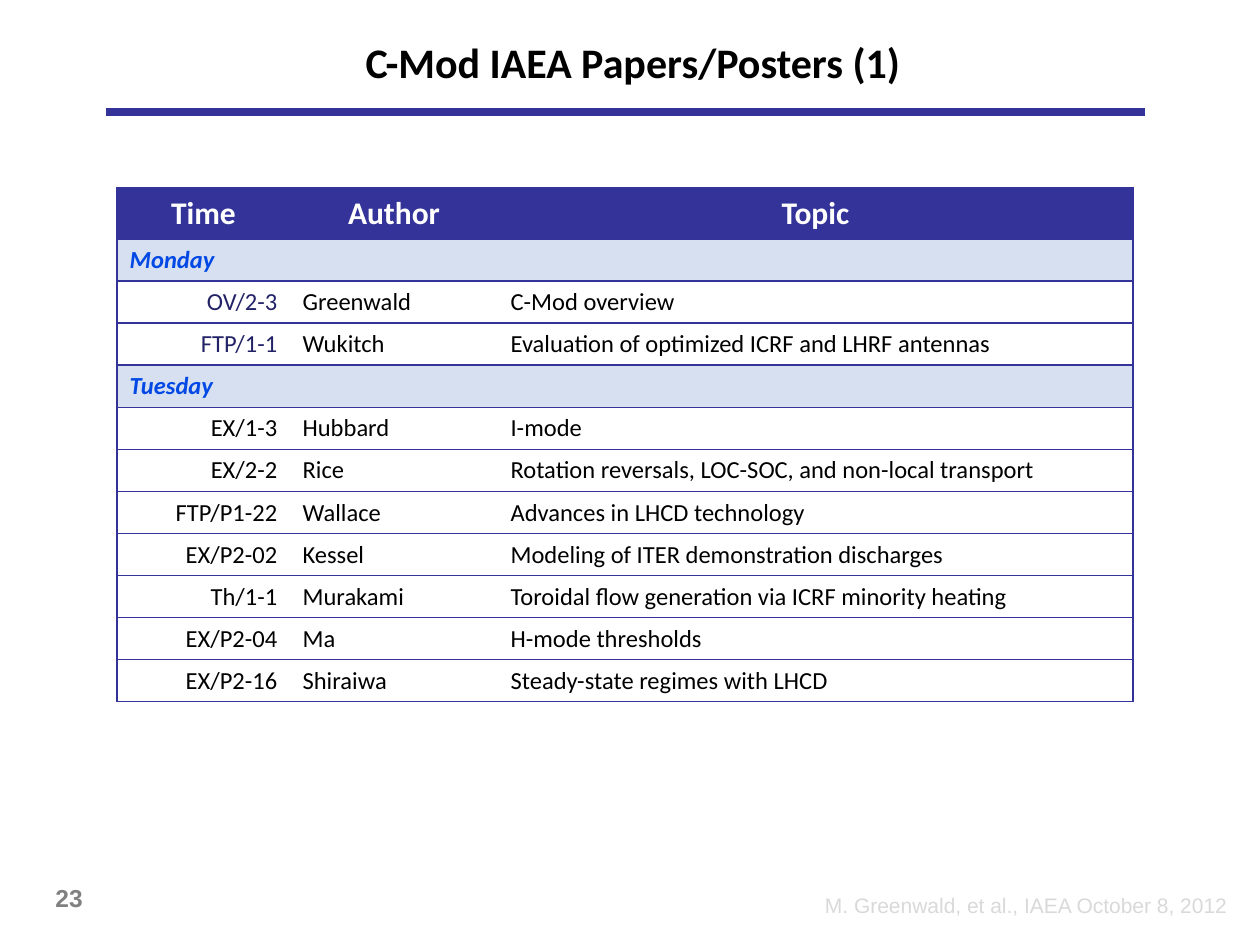
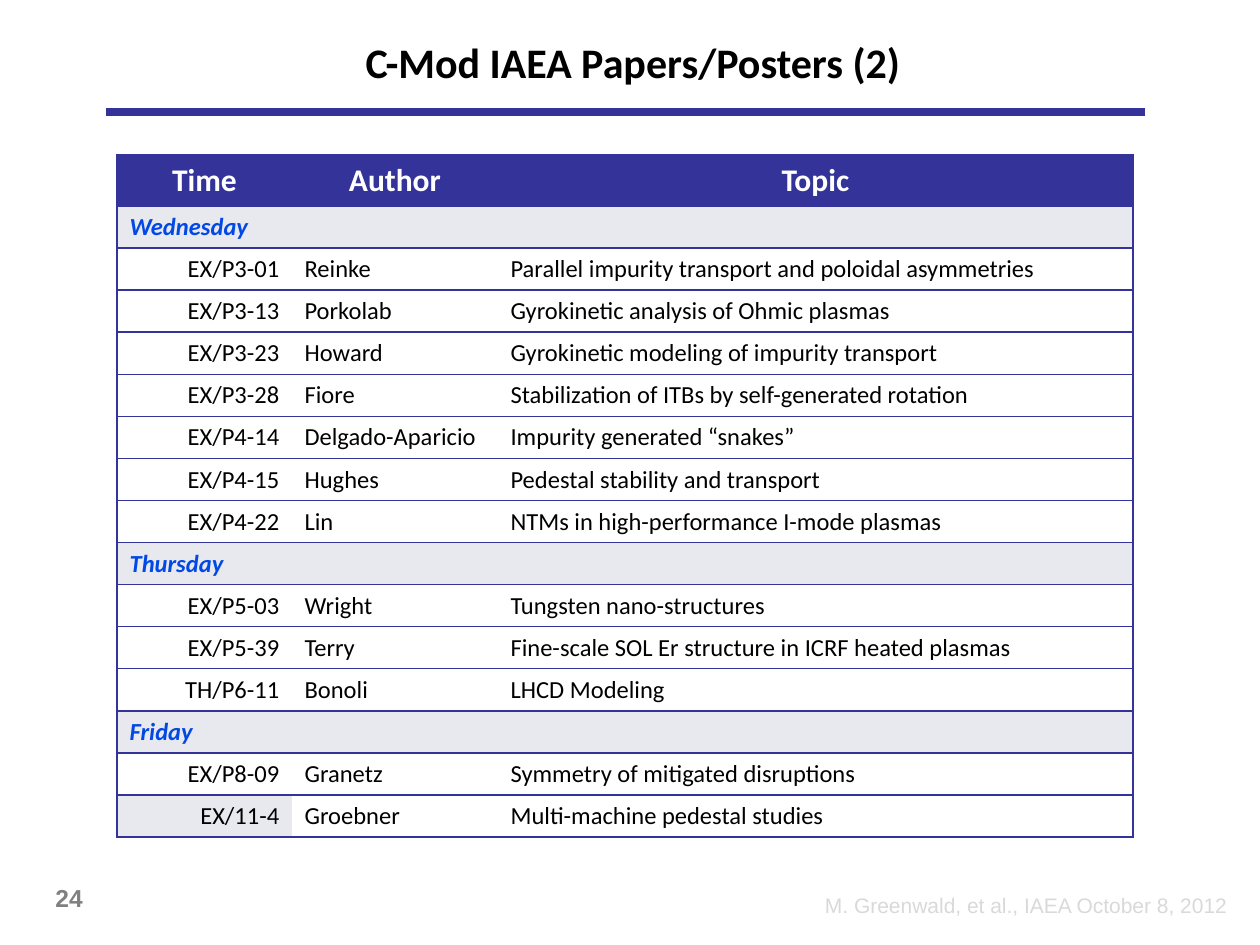
from lxml.etree import SubElement
from pptx import Presentation
from pptx.dml.color import RGBColor
from pptx.enum.shapes import MSO_CONNECTOR
from pptx.enum.text import MSO_ANCHOR, PP_ALIGN
from pptx.oxml import parse_xml
from pptx.oxml.ns import nsdecls, qn
from pptx.util import Emu, Pt

SCALE = 914400 / 126
NAVY, INK, BLACK, WHITE = "333399", "222267", "000000", "FFFFFF"
DAY, GREY, PALE = "0148E5", "808080", "D9D9D9"
HEAD = ["Time", "Author", "Topic"]
HEAD_H, ROW_H = 51, 42
LEFT, CENTER, RIGHT = PP_ALIGN.LEFT, PP_ALIGN.CENTER, PP_ALIGN.RIGHT

# Each day: name, colour of the codes, papers
EARLY = [
    ("Monday", INK, [
        ("OV/2-3", "Greenwald", "C-Mod overview"),
        ("FTP/1-1", "Wukitch", "Evaluation of optimized ICRF and LHRF antennas"),
    ]),
    ("Tuesday", BLACK, [
        ("EX/1-3", "Hubbard", "I-mode"),
        ("EX/2-2", "Rice", "Rotation reversals, LOC-SOC, and non-local transport"),
        ("FTP/P1-22", "Wallace", "Advances in LHCD technology"),
        ("EX/P2-02", "Kessel", "Modeling of ITER demonstration discharges"),
        ("Th/1-1", "Murakami", "Toroidal flow generation via ICRF minority heating"),
        ("EX/P2-04", "Ma", "H-mode thresholds"),
        ("EX/P2-16", "Shiraiwa", "Steady-state regimes with LHCD"),
    ]),
]
LATE = [
    ("Wednesday", BLACK, [
        ("EX/P3-01", "Reinke", "Parallel impurity transport and poloidal asymmetries"),
        ("EX/P3-13", "Porkolab", "Gyrokinetic analysis of Ohmic plasmas"),
        ("EX/P3-23", "Howard", "Gyrokinetic modeling of impurity transport"),
        ("EX/P3-28", "Fiore", "Stabilization of ITBs by self-generated rotation"),
        ("EX/P4-14", "Delgado-Aparicio", "Impurity generated “snakes”"),
        ("EX/P4-15", "Hughes", "Pedestal stability and transport"),
        ("EX/P4-22", "Lin", "NTMs in high-performance I-mode plasmas"),
    ]),
    ("Thursday", BLACK, [
        ("EX/P5-03", "Wright", "Tungsten nano-structures"),
        ("EX/P5-39", "Terry", "Fine-scale SOL Er structure in ICRF heated plasmas"),
        ("TH/P6-11", "Bonoli", "LHCD Modeling"),
    ]),
    ("Friday", BLACK, [
        ("EX/P8-09", "Granetz", "Symmetry of mitigated disruptions"),
        ("EX/11-4", "Groebner", "Multi-machine pedestal studies"),
    ]),
]


def px(n):
    return Emu(round(n * SCALE))


def rgb(code):
    return RGBColor.from_string(code)


def write(frame, text, size, color, align=LEFT, font="Calibri", bold=False, italic=False):
    frame.text = text
    para = frame.paragraphs[0]
    para.alignment = align
    for run in para.runs:
        run.font.name, run.font.size = font, Pt(size)
        run.font.bold, run.font.italic = bold, italic
        run.font.color.rgb = rgb(color)
    if not text:  # keeps an empty cell from stretching its row
        para._p.get_or_add_endParaRPr().set("sz", str(size * 100))
    return para


def label(slide, box, text, size, color, **look):
    frame = slide.shapes.add_textbox(*map(px, box)).text_frame
    frame.word_wrap = True
    write(frame, text, size, color, font="Arial", **look)


def title(slide, box, text):
    shape = slide.shapes.title
    shape.left, shape.top, shape.width, shape.height = map(px, box)
    shape.text_frame.vertical_anchor = MSO_ANCHOR.MIDDLE
    para = write(shape.text_frame, text, 24, BLACK, CENTER, bold=True)
    para.line_spacing, para.space_after = Pt(24), Pt(6)


def rule(slide, left, right, y):
    line = slide.shapes.add_connector(
        MSO_CONNECTOR.STRAIGHT, px(left), px(y), px(right), px(y))
    line.line.color.rgb = rgb(NAVY)
    line.line.width = Pt(4.5)
    SubElement(line._element.spPr, qn("a:effectLst"))


def border(cell, sides):
    """Draw the named sides of a cell and clear the others."""
    props = cell._tc.get_or_add_tcPr()
    for i, side in enumerate("LRTB"):
        fill = (f'<a:solidFill><a:srgbClr val="{NAVY}"/></a:solidFill>'
                if side in sides else "<a:noFill/>")
        props.insert(i, parse_xml(
            f'<a:ln{side} {nsdecls("a")} w="12700">{fill}</a:ln{side}>'))


def paint(cell, color):
    if color:
        cell.fill.solid()
        cell.fill.fore_color.rgb = rgb(color)
    else:
        cell.fill.background()


def fill_row(cells, texts, looks, fills):
    edges = ["LTB", "TB", "RTB"]
    for cell, text, look, fill, edge in zip(cells, texts, looks, fills, edges):
        write(cell.text_frame, text, **look)
        paint(cell, fill)
        border(cell, edge)


def program(slide, left, top, widths, days, tint, marked):
    """Table of papers by day; marked holds codes whose cell is tinted."""
    count = 1 + sum(1 + len(papers) for _, _, papers in days)
    heights = [HEAD_H] + [ROW_H] * (count - 1)
    box = left, top, sum(widths), sum(heights)
    table = slide.shapes.add_table(count, 3, *map(px, box)).table
    for col, width in zip(table.columns, widths):
        col.width = px(width)
    for row, height in zip(table.rows, heights):
        row.height = px(height)

    rows = iter(table.rows)
    head = dict(size=18, color=WHITE, align=CENTER, bold=True)
    fill_row(next(rows).cells, HEAD, [head] * 3, [NAVY] * 3)
    band = dict(size=14, color=DAY, bold=True, italic=True)
    plain = dict(size=14, color=BLACK)
    for day, ink, papers in days:
        fill_row(next(rows).cells, [day, "", ""], [band] * 3, [tint] * 3)
        code = dict(size=14, color=ink, align=RIGHT)
        for paper in papers:
            shade = tint if paper[0] in marked else None
            fill_row(next(rows).cells, paper, [code, plain, plain], [shade, None, None])


def page(deck, number, part, top, widths, days, tint, marked=()):
    slide = deck.slides.add_slide(deck.slide_layouts[5])
    label(slide, (554, 886, 686, 38), "M. Greenwald, et al., IAEA October 8, 2012",
          12, PALE, align=RIGHT)
    label(slide, (43, 877, 72, 42), str(number), 14, GREY, bold=True)
    title(slide, (66, 24, 1134, 83), f"C-Mod IAEA Papers/Posters ({part})")
    rule(slide, 106, 1145, 112)
    program(slide, 117, top, widths, days, tint, marked)


def main():
    deck = Presentation()
    deck.slide_width, deck.slide_height = px(1260), px(945)
    page(deck, 23, 1, 188, (173, 208, 635), EARLY, "D7E0F1")
    page(deck, 24, 2, 155, (175, 206, 635), LATE, "E8E8EF", ["EX/11-4"])
    deck.save("out.pptx")


if __name__ == "__main__":
    main()
